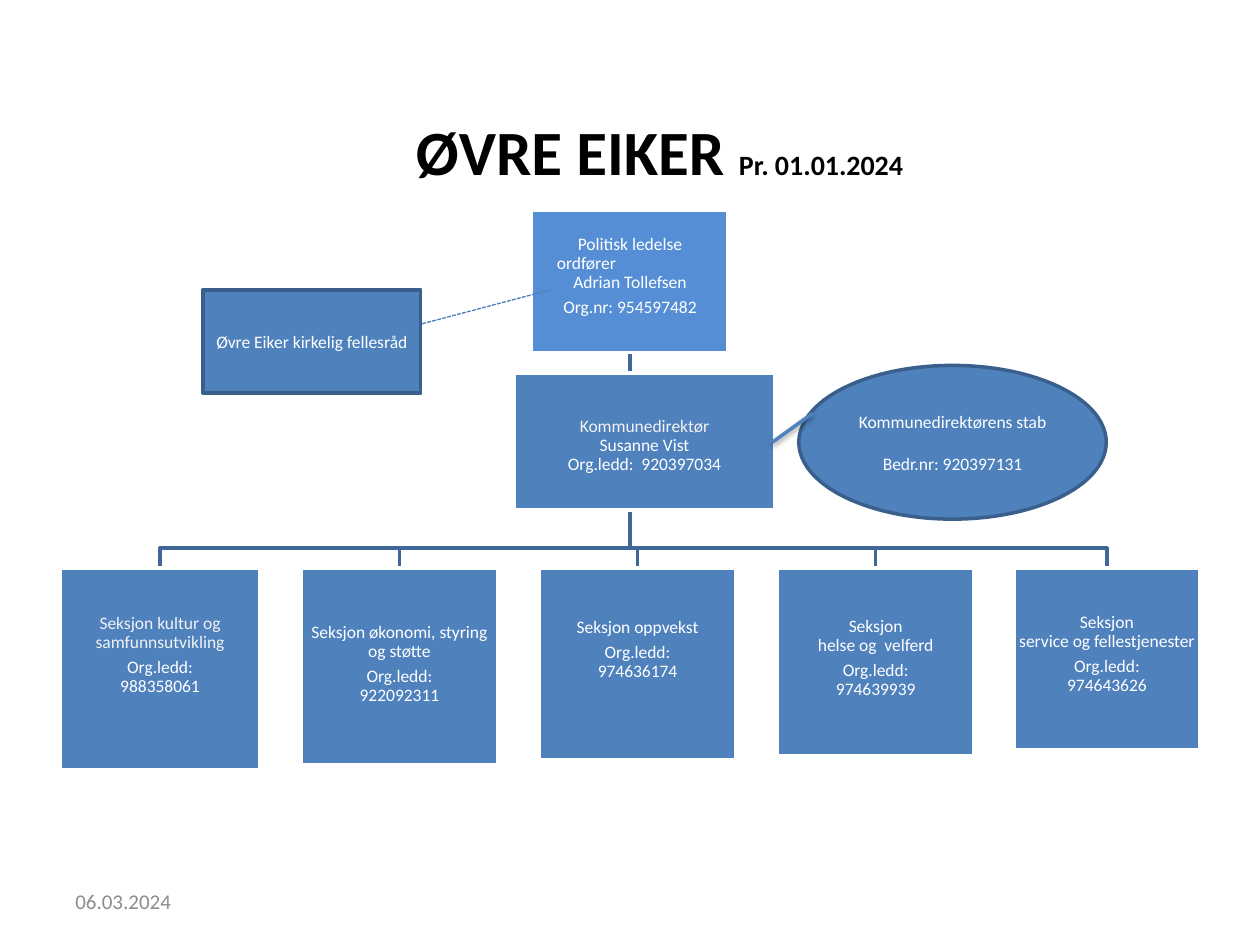
from dataclasses import dataclass

from lxml.etree import SubElement
from pptx import Presentation
from pptx.dml.color import RGBColor
from pptx.enum.dml import MSO_LINE_DASH_STYLE as Dash
from pptx.enum.shapes import MSO_CONNECTOR as Connector, MSO_SHAPE as Shape
from pptx.enum.text import MSO_ANCHOR as Anchor, PP_ALIGN as Align
from pptx.oxml.ns import qn
from pptx.util import Inches, Pt

COLORS = {
    "white": "FFFFFF", "pale": "F2F2F2", "black": "000000", "grey": "8C8C8C",
    "blue": "4F81BD", "light": "558ED5", "edge": "3A5F8C", "branch": "3F6797",
    "dash": "4B7EBC",
}
COLUMNS, ROWS = 100, 75
CELL = Inches(10) // COLUMNS
SECTION_TOP = 45.1
BRANCH_START = (50, 28)
BRANCH_ROW = 43.5


@dataclass(frozen=True)
class Area:
    left: float
    top: float
    width: float
    height: float


@dataclass(frozen=True)
class Line:
    text: str
    color: str = "white"
    size: float = 10
    after: float = 0
    align: Align = Align.CENTER
    indent: float = 0
    tail: str = ""
    tail_size: float = 16


@dataclass(frozen=True)
class Unit:
    area: Area
    text_offset: float
    lines: tuple[Line, ...]
    fill: str = "blue"


def section(left: float, width: float, height: float, offset: float,
            names: tuple[str, ...], number: str, color: str = "white") -> Unit:
    heading = [Line(name, color) for name in names[:-1]]
    heading.append(Line(names[-1], color, after=3.5))
    return Unit(Area(left, SECTION_TOP, width, height), offset,
                (*heading, Line("Org.ledd:"), Line(number)))


SECTIONS = (
    section(4.8, 15.8, 16, 3.7, ("Seksjon kultur og samfunnsutvikling",),
            "988358061", "pale"),
    section(23.9, 15.6, 15.6, 4.4, ("Seksjon økonomi, styring og støtte",),
            "922092311"),
    section(42.8, 15.6, 15.2, 4, ("Seksjon oppvekst",), "974636174"),
    section(61.7, 15.6, 14.9, 3.9, ("Seksjon", "helse og  velferd"),
            "974639939"),
    section(80.5, 14.7, 14.4, 3.6, ("Seksjon", "service og fellestjenester"),
            "974643626"),
)
LEADERSHIP = Unit(
    Area(42.2, 16.7, 15.6, 11.3), 2,
    (Line("Politisk ledelse"),
     Line("ordfører", align=Align.LEFT, indent=1.9),
     Line("Adrian Tollefsen", after=3.5),
     Line("Org.nr: 954597482")), "light")
DIRECTOR = Unit(
    Area(40.8, 29.6, 20.7, 10.9), 3.5,
    (Line("Kommunedirektør", "pale"), Line("Susanne Vist"),
     Line("Org.ledd:  920397034")))


def cells(*values: float) -> list[int]:
    return [round(value * CELL) for value in values]


def rgb(name: str) -> RGBColor:
    return RGBColor.from_string(COLORS[name])


def write_text(shape, lines: tuple[Line, ...], *, anchor=Anchor.MIDDLE,
               spacing: float = 1, bold: bool = False, insets=(1, 0.5, 1, 0.5)) -> None:
    frame = shape.text_frame
    frame.word_wrap = True
    frame.vertical_anchor = anchor
    (frame.margin_left, frame.margin_top,
     frame.margin_right, frame.margin_bottom) = cells(*insets)
    for index, line in enumerate(lines):
        paragraph = frame.add_paragraph() if index else frame.paragraphs[0]
        paragraph.alignment = line.align
        paragraph.line_spacing = spacing
        paragraph.space_after = Pt(line.after)
        if line.indent:
            paragraph._p.get_or_add_pPr().set("marL", str(round(line.indent * CELL)))
        for text, size in ((line.text, line.size), (line.tail, line.tail_size)):
            if text:
                run = paragraph.add_run()
                run.text = text
                run.font.name = "Calibri"
                run.font.size = Pt(size)
                run.font.bold = bold
                run.font.color.rgb = rgb(line.color)


def draw_shape(slide, kind: Shape, area: Area, fill: str, edge: str):
    shape = slide.shapes.add_shape(
        kind, *cells(area.left, area.top, area.width, area.height))
    shape.shadow.inherit = False
    shape.fill.solid()
    shape.fill.fore_color.rgb = rgb(fill)
    shape.line.color.rgb = rgb(edge)
    shape.line.width = Pt(2)
    return shape


def draw_unit(slide, unit: Unit) -> None:
    shape = draw_shape(slide, Shape.RECTANGLE, unit.area, unit.fill, "white")
    write_text(shape, unit.lines, anchor=Anchor.TOP, spacing=0.9,
               insets=(0.1, unit.text_offset, 0.1, 0.1))


def draw_branch(slide, area: Area) -> None:
    center = area.left + area.width / 2
    points = [(BRANCH_START[0], BRANCH_ROW), (center, BRANCH_ROW), (center, area.top)]
    builder = slide.shapes.build_freeform(*cells(*BRANCH_START))
    builder.add_line_segments([tuple(cells(*point)) for point in points], close=False)
    branch = builder.convert_to_shape()
    branch.shadow.inherit = False
    branch.fill.background()
    branch.line.color.rgb = rgb("branch")
    branch.line.width = Pt(2)


def draw_link(slide, start: tuple[float, float], end: tuple[float, float],
              color: str, width: float, dash=None, shadow: bool = False) -> None:
    link = slide.shapes.add_connector(Connector.STRAIGHT, *cells(*start, *end))
    link.line.color.rgb = rgb(color)
    link.line.width = Pt(width)
    if dash:
        link.line.dash_style = dash
    effects = SubElement(link._element.spPr, qn("a:effectLst"))
    if shadow:
        outer = SubElement(effects, qn("a:outerShdw"), blurRad="40000",
                           dist="20000", dir="5400000", rotWithShape="0")
        tint = SubElement(outer, qn("a:srgbClr"), val=COLORS["black"])
        SubElement(tint, qn("a:alpha"), val="38000")


def draw_label(slide, area: Area, line: Line, **text_format) -> None:
    box = slide.shapes.add_textbox(
        *cells(area.left, area.top, area.width, area.height))
    write_text(box, (line,), **text_format)


def main() -> None:
    presentation = Presentation()
    presentation.slide_width = COLUMNS * CELL
    presentation.slide_height = ROWS * CELL
    slide = presentation.slides.add_slide(presentation.slide_layouts[6])
    for unit in reversed(SECTIONS):
        draw_branch(slide, unit.area)
    for unit in (LEADERSHIP, *SECTIONS, DIRECTOR):
        draw_unit(slide, unit)
    draw_label(slide, Area(19.3, 8.4, 66.1, 7.1),
               Line("ØVRE EIKER ", "black", 36, tail="Pr. 01.01.2024"),
               anchor=Anchor.TOP, bold=True)
    staff = draw_shape(slide, Shape.OVAL, Area(63.4, 29, 24.4, 12.2), "blue", "edge")
    write_text(staff, (Line("Kommunedirektørens stab", after=12),
                       Line("Bedr.nr: 920397131")))
    draw_link(slide, (61.3, 35.1), (64.5, 32.8), "blue", 2, shadow=True)
    draw_label(slide, Area(5, 69.5, 23.3, 4),
               Line("06.03.2024", "grey", 12, align=Align.LEFT))
    council = draw_shape(slide, Shape.RECTANGLE, Area(16.1, 23, 17.3, 8.2),
                         "blue", "edge")
    write_text(council, (Line("Øvre Eiker kirkelig fellesråd"),))
    draw_link(slide, (43.7, 23), (33.5, 25.7), "dash", 0.75, dash=Dash.SQUARE_DOT)
    presentation.save("out.pptx")


if __name__ == "__main__":
    main()
